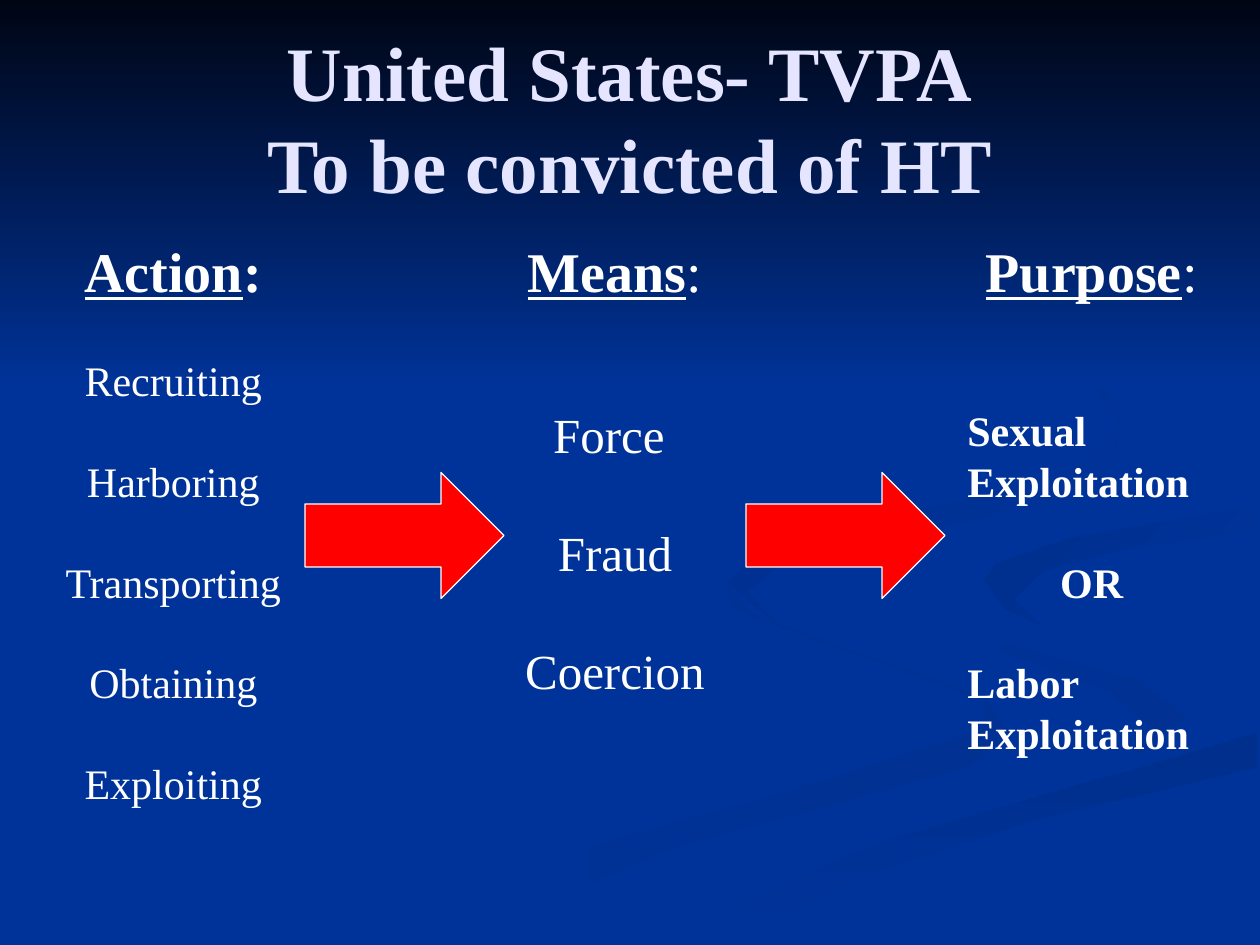
from pptx import Presentation
from pptx.dml.color import RGBColor
from pptx.enum.shapes import MSO_SHAPE as Shape
from pptx.enum.text import MSO_ANCHOR as Anchor, PP_ALIGN as Align
from pptx.util import Emu, Pt

PX = 9144
FONT = "Times New Roman"
LINE_HEIGHT = 1.2
BLUE = RGBColor(0x00, 0x33, 0x99)
SHADE = RGBColor(0x00, 0x2F, 0x8D)
FAINT_SHADE = RGBColor(0x00, 0x31, 0x93)
NIGHT = RGBColor(0x00, 0x05, 0x14)
LILAC = RGBColor(0xE5, 0xE5, 0xFF)
WHITE = RGBColor(0xFF, 0xFF, 0xFF)
RED = RGBColor(0xFF, 0x00, 0x00)

SWOOSHES = [
    ((BLUE, FAINT_SHADE), 0, [
        (781, 553), (682, 519), (594, 485), (575, 459), (581, 484), (679, 519), (781, 556),
        (780, 579), (652, 620), (458, 674), (300, 749), (361, 749), (532, 674), (769, 609),
        (800, 581)]),
    ((BLUE, FAINT_SHADE), 315, [
        (943, 570), (905, 540), (774, 503), (724, 464), (746, 500), (880, 549), (918, 581),
        (894, 605), (937, 586)]),
    ((SHADE, BLUE), 270, [
        (503, 749), (571, 749), (695, 692), (821, 651), (998, 609), (998, 581), (903, 610),
        (764, 647), (630, 693)]),
    ((BLUE, BLUE), 0, [
        (725, 464), (759, 498), (905, 540), (943, 570), (892, 605), (663, 668), (477, 749),
        (519, 747), (696, 669), (999, 581), (999, 538), (817, 492), (782, 460), (850, 427),
        (999, 402), (999, 387), (770, 427)]),
    ((SHADE, BLUE), 315, [
        (781, 460), (797, 483), (826, 496), (805, 476), (828, 453), (896, 435), (998, 420),
        (998, 402), (849, 427), (791, 447)]),
    ((SHADE, BLUE), 315, [
        (683, 430), (825, 402), (883, 370), (890, 324), (843, 275), (762, 233), (846, 279),
        (889, 335), (861, 370), (763, 398), (615, 429), (577, 462), (622, 500), (593, 470),
        (624, 444)]),
]

COLUMNS = [
    ((367, 183, 242, 421), "Means", False, 57.6, 28, False,
     [("Force ", Align.CENTER), ("Fraud", Align.CENTER), ("Coercion", Align.CENTER)]),
    ((0, 183, 275, 579), "Action", True, 28.8, 24, False,
     [(act, Align.CENTER) for act in
      ("Recruiting", "Harboring", "Transporting", "Obtaining", "Exploiting")]),
    ((758, 183, 217, 468), "Purpose", False, 57.6, 24, True,
     [("Sexual Exploitation", Align.LEFT), ("OR", Align.CENTER),
      ("Labor Exploitation", Align.LEFT)]),
]
ARROWS = [(left, 375, 158, 100) for left in (242, 592)]


def emu(box):
    """Turn px lengths into EMU."""
    return [Emu(length * PX) for length in box]


def format_font(font, color=WHITE, **values):
    """Set the shared typeface and the given values on a font."""
    for attribute, value in {"name": FONT, **values}.items():
        setattr(font, attribute, value)
    font.color.rgb = color


def shade(area, colors, angle):
    """Give an area a two-colour gradient and no outline."""
    area.shadow.inherit = False
    area.line.fill.background()
    area.fill.gradient()
    area.fill.gradient_angle = angle
    for stop, color in zip(area.fill.gradient_stops, colors):
        stop.color.rgb = color


def paint_backdrop(slide, box):
    """Fill the background, then add the swooshes and the dark band."""
    slide.background.fill.solid()
    slide.background.fill.fore_color.rgb = BLUE
    left, top, width, _ = emu(box)
    backdrop = slide.shapes.add_group_shape()
    for colors, angle, outline in SWOOSHES:
        builder = backdrop.shapes.build_freeform(*outline[0], scale=PX)
        builder.add_line_segments(outline[1:], close=True)
        shade(builder.convert_to_shape(left, top), colors, angle)
    band = backdrop.shapes.add_shape(Shape.RECTANGLE, left, top, width, Emu(308 * PX))
    shade(band, (NIGHT, BLUE), 270)


def place_title(slide, box):
    """Put the two-line title in front of the backdrop."""
    title = slide.shapes.title
    slide.shapes._spTree.append(title._element)
    title.left, title.top, title.width, title.height = emu(box)
    frame = title.text_frame
    frame.text = "United States- TVPA\vTo be convicted of HT"
    frame.vertical_anchor = Anchor.MIDDLE
    heading = frame.paragraphs[0]
    heading.alignment = Align.CENTER
    for line in heading.runs:
        format_font(line.font, size=Pt(44), bold=True, color=LILAC)


def add_words(paragraph, words, **values):
    """Add formatted words to a paragraph."""
    run = paragraph.add_run()
    run.text = words
    format_font(run.font, **values)


def add_column(slide, box, heading, bold_colon, first_gap, size, bold, elements):
    """Add an underlined heading with its evenly spaced elements."""
    frame = slide.shapes.add_textbox(*emu(box)).text_frame
    frame.word_wrap = True
    top_line = frame.paragraphs[0]
    top_line.alignment = Align.CENTER
    add_words(top_line, heading, size=Pt(32), bold=True, underline=True)
    add_words(top_line, ":", size=Pt(32), bold=bold_colon)
    for index, (words, alignment) in enumerate(elements):
        element = frame.add_paragraph()
        element.alignment = alignment
        element.space_before = Pt(size * LINE_HEIGHT if index else first_gap)
        add_words(element, words, size=Pt(size), bold=bold)


def add_arrow(slide, box):
    """Add a red arrow leading to the next column."""
    arrow = slide.shapes.add_shape(Shape.RIGHT_ARROW, *emu(box))
    arrow.shadow.inherit = False
    arrow.fill.solid()
    arrow.fill.fore_color.rgb = RED
    arrow.line.color.rgb = WHITE
    arrow.line.width = Pt(0.75)


def main():
    """Build and save the slide."""
    deck = Presentation()
    deck.slide_width, deck.slide_height = emu((1000, 750))
    slide = deck.slides.add_slide(deck.slide_layouts[5])
    paint_backdrop(slide, (0, 0, 1000, 750))
    place_title(slide, (50, 30, 900, 125))
    for column in COLUMNS:
        add_column(slide, *column)
    for box in ARROWS:
        add_arrow(slide, box)
    deck.save("out.pptx")


if __name__ == "__main__":
    main()
